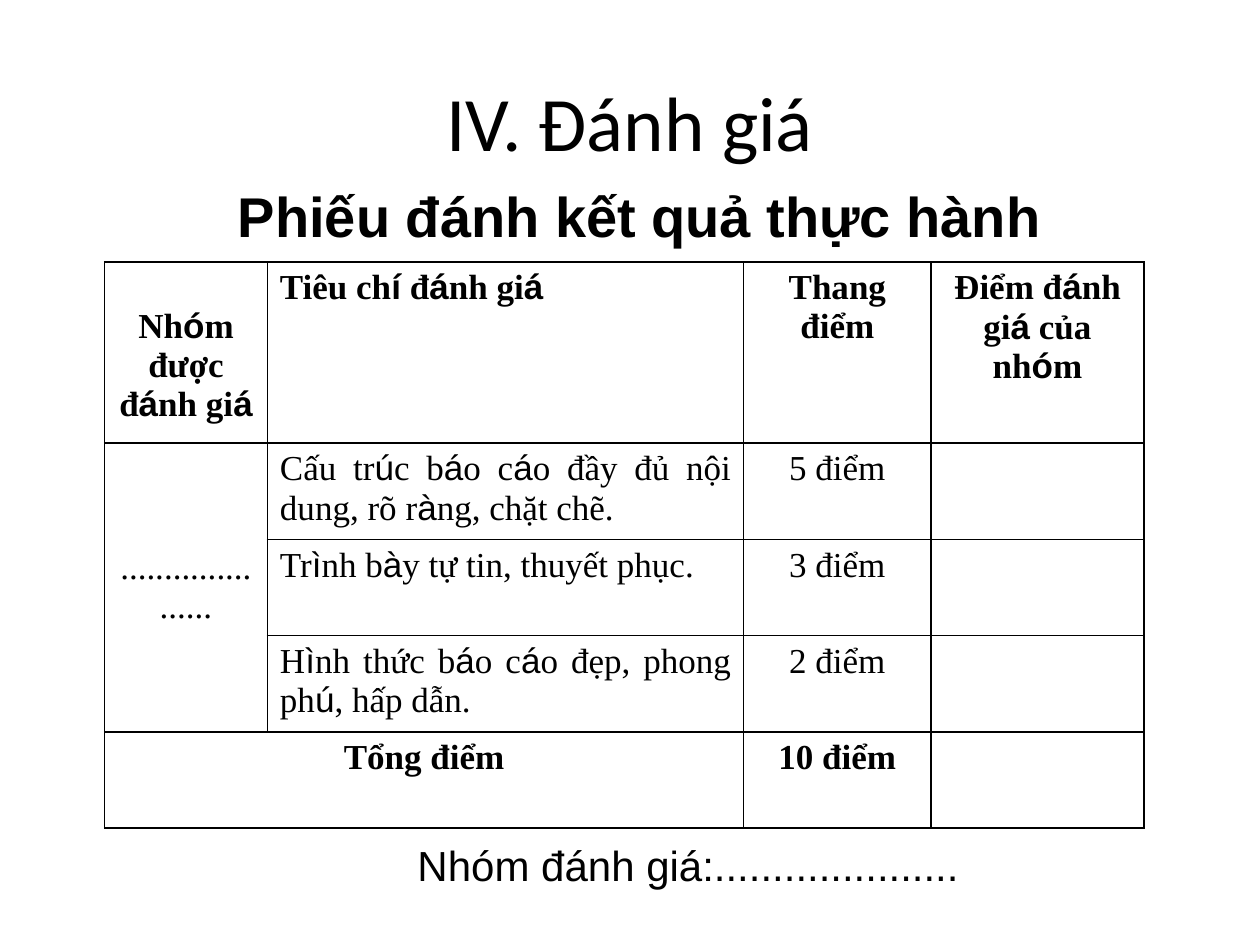
import itertools

import pptx
import pptx.dml.color
import pptx.enum.text
import pptx.oxml
import pptx.oxml.ns
import pptx.util

Cm, Pt = pptx.util.Cm, pptx.util.Pt
ALIGN = pptx.enum.text.PP_ALIGN
MIDDLE = pptx.enum.text.MSO_ANCHOR.MIDDLE
BLACK = pptx.dml.color.RGBColor(0, 0, 0)

# text, left, top, width, height (cm), size, font, bold, left margin (cm)
HEADINGS = [
    ("IV. Đánh giá", 1.27, 0.84, 22.86, 3.18, 44, "Calibri", False, 0.25),
    ("Phiếu đánh kết quả thực hành", 1.47, 3.53, 22.86, 1.6, 32, "Arial", True, 0.25),
    ("Nhóm đánh giá:.....................", 1.07, 16.79, 23.06, 1.27, 24, "Arial", False, 2.8),
]
RUBRIC = [
    ("Nhóm được đánh giá", "Tiêu chí đánh giá", "Thang điểm", "Điểm đánh giá của nhóm"),
    (".....................", "Cấu trúc báo cáo đầy đủ nội dung, rõ ràng, chặt chẽ.", "5 điểm", ""),
    ("", "Trình bày tự tin, thuyết phục.", "3 điểm", ""),
    ("", "Hình thức báo cáo đẹp, phong phú, hấp dẫn.", "2 điểm", ""),
    ("Tổng điểm", "", "10 điểm", ""),
]
TABLE_LEFT, TABLE_TOP = 2.11, 5.28
COLUMN_WIDTHS = [3.28, 9.6, 3.78, 4.29]
ROW_HEIGHTS = [3.65] + [1.93] * 4
ARIAL_LETTERS = "óáíúàì"


def style_run(run, size, font, bold):
    run.font.size = Pt(size)
    run.font.name = font
    run.font.bold = bold
    run.font.color.rgb = BLACK


def add_heading(slide, text, left, top, width, height, size, font, bold, margin):
    box = slide.shapes.add_textbox(Cm(left), Cm(top), Cm(width), Cm(height))
    frame = box.text_frame
    frame.word_wrap = True
    frame.vertical_anchor = MIDDLE
    frame.margin_left = Cm(margin)
    frame.text = text
    frame.paragraphs[0].alignment = ALIGN.CENTER
    style_run(frame.paragraphs[0].runs[0], size, font, bold)


def add_mixed_text(paragraph, text, bold):
    """Write text in Times New Roman with the ARIAL_LETTERS in Arial."""
    for is_arial, letters in itertools.groupby(text, lambda letter: letter in ARIAL_LETTERS):
        run = paragraph.add_run()
        run.text = "".join(letters)
        style_run(run, 20, "Arial" if is_arial else "Times New Roman", bold)


def add_borders(cell):
    properties = cell._tc.get_or_add_tcPr()
    for position, side in enumerate("LRTB"):
        properties.insert(position, pptx.oxml.parse_xml(
            f'<a:ln{side} {pptx.oxml.ns.nsdecls("a")} w="{Pt(1)}"><a:solidFill>'
            f'<a:srgbClr val="{BLACK}"/></a:solidFill></a:ln{side}>'))


def add_rubric(slide):
    table = slide.shapes.add_table(
        len(RUBRIC), len(COLUMN_WIDTHS), Cm(TABLE_LEFT), Cm(TABLE_TOP),
        Cm(sum(COLUMN_WIDTHS)), Cm(sum(ROW_HEIGHTS))).table
    table.first_row = table.horz_banding = False
    for column, width in zip(table.columns, COLUMN_WIDTHS):
        column.width = Cm(width)
    last = len(RUBRIC) - 1
    for r, texts in enumerate(RUBRIC):
        table.rows[r].height = Cm(ROW_HEIGHTS[r])
        for c, text in enumerate(texts):
            cell = table.cell(r, c)
            cell.fill.background()
            add_borders(cell)
            paragraph = cell.text_frame.paragraphs[0]
            add_mixed_text(paragraph, text, r in (0, last))
            if c != 1:
                paragraph.alignment = ALIGN.CENTER
            else:
                paragraph.alignment = ALIGN.LEFT if r == 0 else ALIGN.JUSTIFY
    table.cell(0, 0).margin_top = Cm(0.91)
    table.cell(1, 0).vertical_anchor = MIDDLE
    table.cell(1, 0).merge(table.cell(last - 1, 0))
    table.cell(last, 0).merge(table.cell(last, 1))


def main():
    deck = pptx.Presentation()
    deck.slide_width, deck.slide_height = Cm(25.4), Cm(19.05)
    slide = deck.slides.add_slide(deck.slide_layouts[6])
    for heading in HEADINGS:
        add_heading(slide, *heading)
    add_rubric(slide)
    deck.save("out.pptx")


if __name__ == "__main__":
    main()
